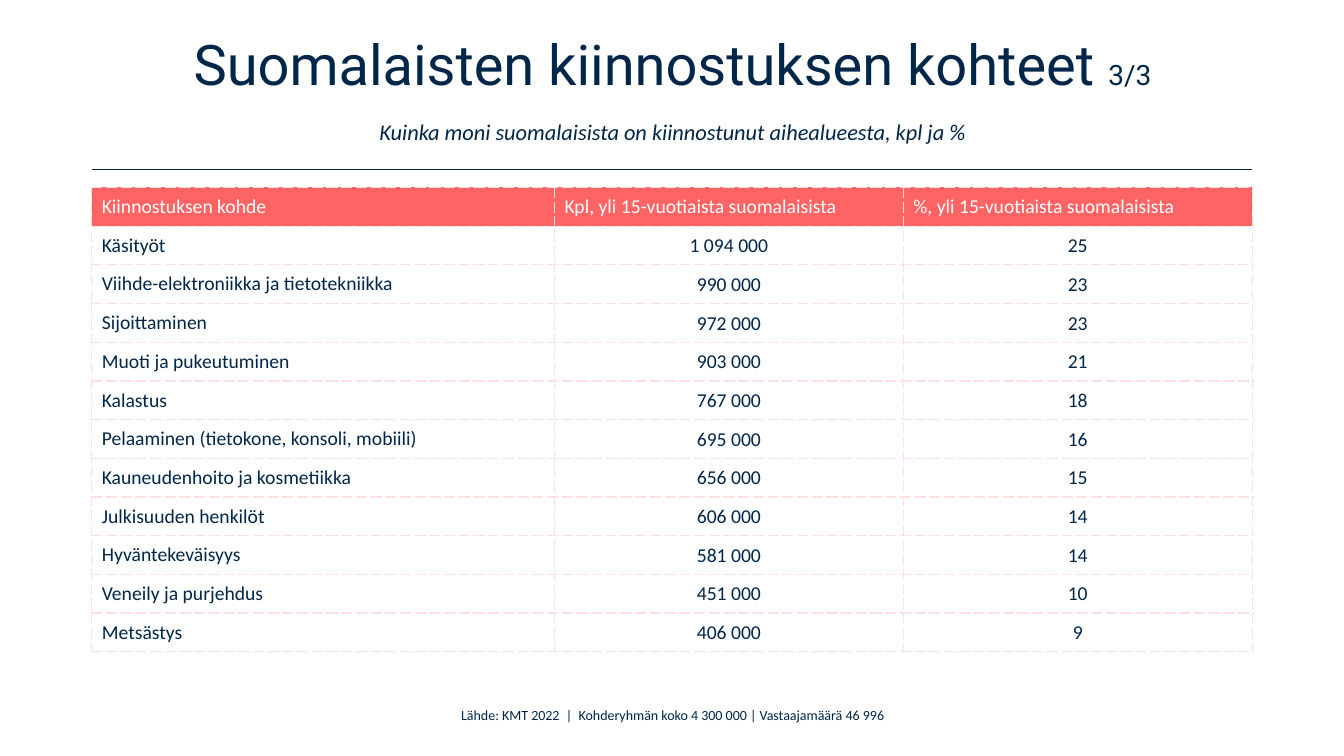
from lxml.etree import SubElement
from pptx import Presentation
from pptx.dml.color import RGBColor
from pptx.enum.shapes import MSO_CONNECTOR
from pptx.enum.text import MSO_ANCHOR, MSO_AUTO_SIZE, PP_ALIGN
from pptx.oxml.ns import qn
from pptx.util import Inches, Pt

NAVY = RGBColor(0x00, 0x26, 0x49)
CORAL = RGBColor(0xFF, 0x64, 0x64)
PALE_PINK = RGBColor(0xFF, 0xE0, 0xE0)
WHITE = RGBColor(0xFF, 0xFF, 0xFF)

HEADERS = (
    "Kiinnostuksen kohde",
    "Kpl, yli 15-vuotiaista suomalaisista",
    "%, yli 15-vuotiaista suomalaisista",
)
INTERESTS = [
    ("Käsityöt", "1 094 000", "25"),
    ("Viihde-elektroniikka ja tietotekniikka", "990 000", "23"),
    ("Sijoittaminen", "972 000", "23"),
    ("Muoti ja pukeutuminen", "903 000", "21"),
    ("Kalastus", "767 000", "18"),
    ("Pelaaminen (tietokone, konsoli, mobiili)", "695 000", "16"),
    ("Kauneudenhoito ja kosmetiikka", "656 000", "15"),
    ("Julkisuuden henkilöt", "606 000", "14"),
    ("Hyväntekeväisyys", "581 000", "14"),
    ("Veneily ja purjehdus", "451 000", "10"),
    ("Metsästys", "406 000", "9"),
]
COLUMN_WIDTHS = (4.59, 3.46, 3.46)
TABLE_HEIGHT = 4.61


def add_text(paragraph, text, size=14, font="Calibri", color=NAVY,
             italic=False, align=PP_ALIGN.LEFT):
    paragraph.alignment = align
    run = paragraph.add_run()
    run.text = text
    run.font.size = Pt(size)
    run.font.name = font
    run.font.italic = italic
    run.font.color.rgb = color


def add_title(slide):
    title = slide.shapes.title
    title.left, title.top = Inches(0.92), Inches(0.42)
    title.width, title.height = Inches(11.5), Inches(1.07)
    frame = title.text_frame
    frame.word_wrap = True
    frame.auto_size = MSO_AUTO_SIZE.NONE
    frame.vertical_anchor = MSO_ANCHOR.MIDDLE
    paragraph = frame.paragraphs[0]
    paragraph.line_spacing = Pt(35)
    paragraph.space_after = Pt(18)
    add_text(paragraph, "Suomalaisten kiinnostuksen kohteet ", size=40,
             font="Roboto", align=PP_ALIGN.CENTER)
    add_text(paragraph, "3/3", size=20, font="Roboto", align=PP_ALIGN.CENTER)
    paragraph.add_line_break()
    add_text(paragraph, "Kuinka moni suomalaisista on kiinnostunut aihealueesta, kpl ja %",
             size=16, italic=True, align=PP_ALIGN.CENTER)


def add_rule(slide, left, right, top):
    rule = slide.shapes.add_connector(
        MSO_CONNECTOR.STRAIGHT, Inches(left), Inches(top), Inches(right), Inches(top))
    rule.line.color.rgb = NAVY
    rule.line.width = Pt(1)
    SubElement(rule._element.spPr, qn("a:effectLst"))


def set_borders(cell):
    properties = cell._tc.get_or_add_tcPr()
    for position, side in enumerate(("a:lnL", "a:lnR", "a:lnT", "a:lnB")):
        line = properties.makeelement(qn(side), {"w": str(Pt(1))})
        properties.insert(position, line)
        fill = SubElement(line, qn("a:solidFill"))
        SubElement(fill, qn("a:srgbClr"), val=str(PALE_PINK))
        SubElement(line, qn("a:prstDash"), val="sysDash")


def fill_cell(cell, text, is_header, is_number):
    cell.vertical_anchor = MSO_ANCHOR.MIDDLE
    if is_header:
        cell.fill.solid()
        cell.fill.fore_color.rgb = CORAL
    else:
        cell.fill.background()
    if is_number:
        cell.margin_left = cell.margin_right = cell.margin_top = Inches(0.01)
        cell.margin_bottom = 0
    set_borders(cell)
    add_text(cell.text_frame.paragraphs[0], text,
             color=WHITE if is_header else NAVY,
             align=PP_ALIGN.CENTER if is_number else PP_ALIGN.LEFT)


def add_interest_table(slide):
    rows = [HEADERS, *INTERESTS]
    table = slide.shapes.add_table(
        len(rows), len(HEADERS), Inches(0.91), Inches(1.86),
        Inches(sum(COLUMN_WIDTHS)), Inches(TABLE_HEIGHT)).table
    table.horz_banding = False
    table.first_row = False
    for column, width in zip(table.columns, COLUMN_WIDTHS):
        column.width = Inches(width)
    for row_index, values in enumerate(rows):
        is_header = row_index == 0
        for column_index, value in enumerate(values):
            fill_cell(table.cell(row_index, column_index), value, is_header,
                      is_number=not is_header and column_index > 0)


def add_source_note(slide):
    note = slide.shapes.add_textbox(Inches(4.08), Inches(6.96), Inches(5.18), Inches(0.27))
    frame = note.text_frame
    frame.word_wrap = True
    frame.auto_size = MSO_AUTO_SIZE.SHAPE_TO_FIT_TEXT
    add_text(frame.paragraphs[0],
             "Lähde: KMT 2022  |  Kohderyhmän koko 4 300 000 | Vastaajamäärä 46 996",
             size=10, align=PP_ALIGN.CENTER)


def main():
    presentation = Presentation()
    presentation.slide_width = Inches(13.33)
    presentation.slide_height = Inches(7.5)
    # Layout 5 holds a title only
    slide = presentation.slides.add_slide(presentation.slide_layouts[5])

    # Heading with subtitle and rule
    add_title(slide)
    add_rule(slide, left=0.91, right=12.42, top=1.68)

    # Table and its source
    add_interest_table(slide)
    add_source_note(slide)

    presentation.save("out.pptx")


if __name__ == "__main__":
    main()
